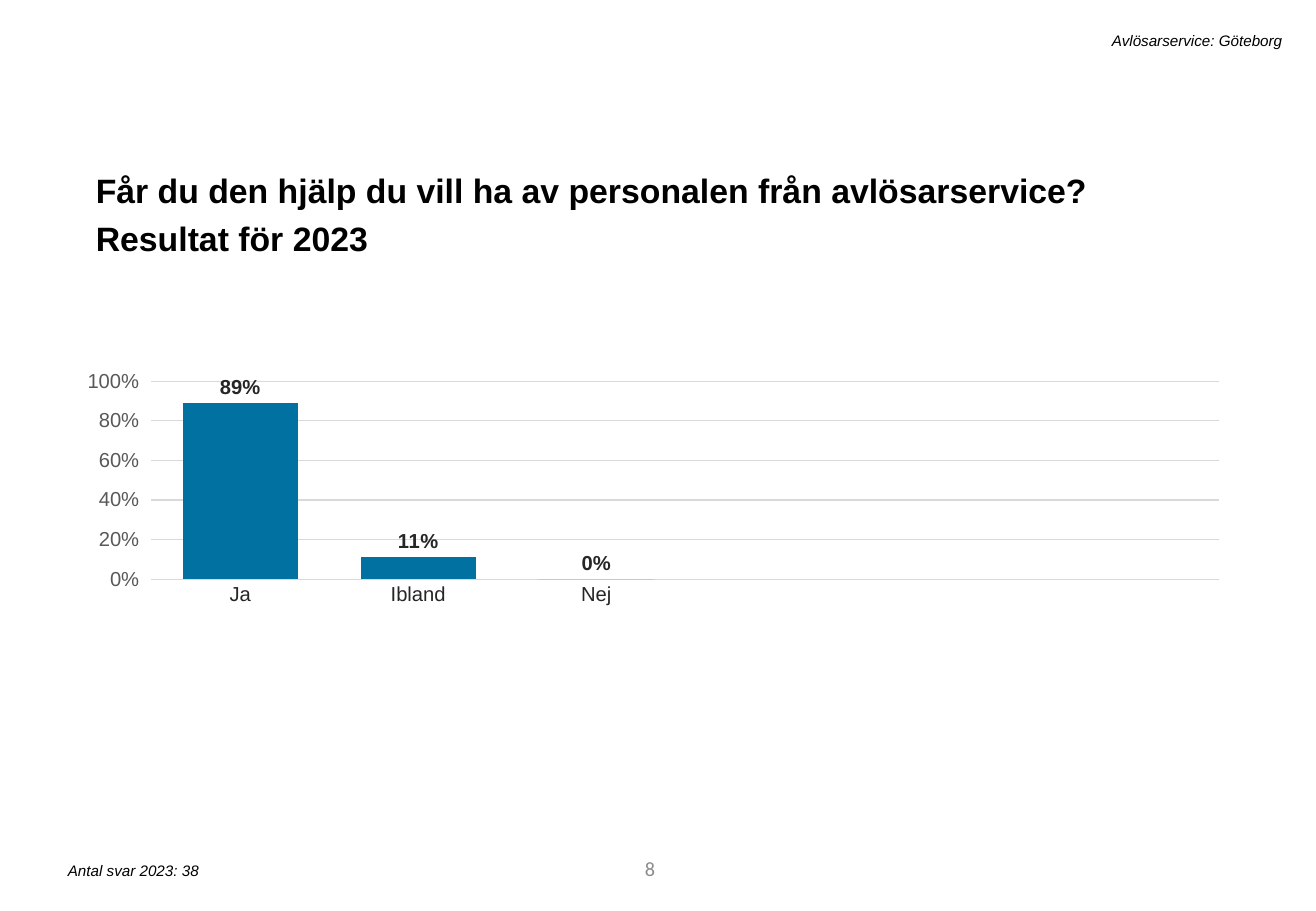
import pptx
import pptx.chart.data
import pptx.dml.color
import pptx.enum.chart
import pptx.enum.text
import pptx.util
from lxml import etree

Inches = pptx.util.Inches
Pt = pptx.util.Pt
ALIGN = pptx.enum.text.PP_ALIGN
ANCHOR = pptx.enum.text.MSO_ANCHOR

COLORS = {
    "black": "000000",
    "bar": "0071A1",
    "grid": "D9D9D9",
    "label": "262626",
    "scale": "595959",
    "page": "8C8C8C",
}
QUESTION = "Får du den hjälp du vill ha av personalen från avlösarservice? Resultat för 2023"
SERVICE = "Avlösarservice: Göteborg"
RESPONSES = "Antal svar 2023: 38"
PAGE = "8"
ANSWERS = [("Ja", 0.89), ("Ibland", 0.11), ("Nej", 0), ("", None), ("", None), ("", None)]
CHART_BOX = (0.72, 2.53, 9.4, 3.95)
PLOT = {"x": 0.054, "y": 0.154, "w": 0.937, "h": 0.413}


def rgb(color):
    return pptx.dml.color.RGBColor.from_string(COLORS[color])


def style_font(font, size, color="black", name="Arial", bold=False, italic=False):
    font.size = Pt(size)
    font.name = name
    font.bold = bold
    font.italic = italic
    font.color.rgb = rgb(color)


def add_text(slide, text, box, align=ALIGN.LEFT, anchor=ANCHOR.TOP,
             line_spacing=None, space_before=None, **font_format):
    frame = slide.shapes.add_textbox(*map(Inches, box)).text_frame
    frame.word_wrap = True
    frame.vertical_anchor = anchor
    paragraph = frame.paragraphs[0]
    paragraph.alignment = align
    paragraph.line_spacing = line_spacing
    paragraph.space_before = space_before
    run = paragraph.add_run()
    run.text = text
    style_font(run.font, **font_format)


def style_line(line):
    line.color.rgb = rgb("grid")
    line.width = Pt(0.75)


def set_plot_layout(chart):
    plot_area = chart.plots[0]._element.getparent()
    namespace = etree.QName(plot_area).namespace
    for old_layout in plot_area.findall(f"{{{namespace}}}layout"):
        plot_area.remove(old_layout)
    layout = etree.Element(f"{{{namespace}}}layout")
    manual = etree.SubElement(layout, f"{{{namespace}}}manualLayout")
    settings = {"layoutTarget": "inner", "xMode": "edge", "yMode": "edge", **PLOT}
    for tag, value in settings.items():
        etree.SubElement(manual, f"{{{namespace}}}{tag}").set("val", str(value))
    plot_area.insert(0, layout)


def add_answer_chart(slide):
    kinds = pptx.enum.chart
    data = pptx.chart.data.CategoryChartData(number_format="0%")
    data.categories = [answer for answer, share in ANSWERS]
    data.add_series("Series 1", [share for answer, share in ANSWERS])
    chart = slide.shapes.add_chart(
        kinds.XL_CHART_TYPE.COLUMN_CLUSTERED, *map(Inches, CHART_BOX), data).chart
    chart.has_legend = False
    chart.has_title = False
    style_font(chart.font, 10)
    set_plot_layout(chart)

    answers = chart.category_axis
    answers.major_tick_mark = kinds.XL_TICK_MARK.NONE
    style_font(answers.tick_labels.font, 12, "label")
    style_line(answers.format.line)

    scale = chart.value_axis
    scale.minimum_scale, scale.maximum_scale, scale.major_unit = 0, 1, 0.2
    scale.major_tick_mark = kinds.XL_TICK_MARK.OUTSIDE
    scale.tick_labels.number_format = "0%"
    scale.tick_labels.number_format_is_linked = False
    style_font(scale.tick_labels.font, 12, "scale")
    scale.format.line.fill.background()
    style_line(scale.major_gridlines.format.line)

    bars = chart.plots[0]
    bars.gap_width = 55
    bars.vary_by_categories = False
    shares = bars.series[0]
    shares.format.fill.solid()
    shares.format.fill.fore_color.rgb = rgb("bar")
    labels = shares.data_labels
    labels.show_value = True
    labels.position = kinds.XL_LABEL_POSITION.OUTSIDE_END
    labels.number_format = "0%"
    labels.number_format_is_linked = False
    style_font(labels.font, 12, "label", bold=True)


def main():
    deck = pptx.Presentation()
    deck.slide_width = Inches(10.83)
    deck.slide_height = Inches(7.5)
    slide = deck.slides.add_slide(deck.slide_layouts[6])
    add_text(slide, PAGE, (3.05, 6.95, 2.44, 0.4), align=ALIGN.RIGHT,
             anchor=ANCHOR.MIDDLE, size=12, color="page", name="Calibri")
    add_answer_chart(slide)
    add_text(slide, QUESTION, (0.69, 1.28, 9.4, 0.47), line_spacing=1.2,
             space_before=Pt(10), size=20, bold=True)
    add_text(slide, SERVICE, (1.79, 0.21, 8.86, 0.25), align=ALIGN.RIGHT,
             size=9, italic=True)
    add_text(slide, RESPONSES, (0.46, 7.04, 4.41, 0.25), size=9, italic=True)
    deck.save("out.pptx")


if __name__ == "__main__":
    main()
